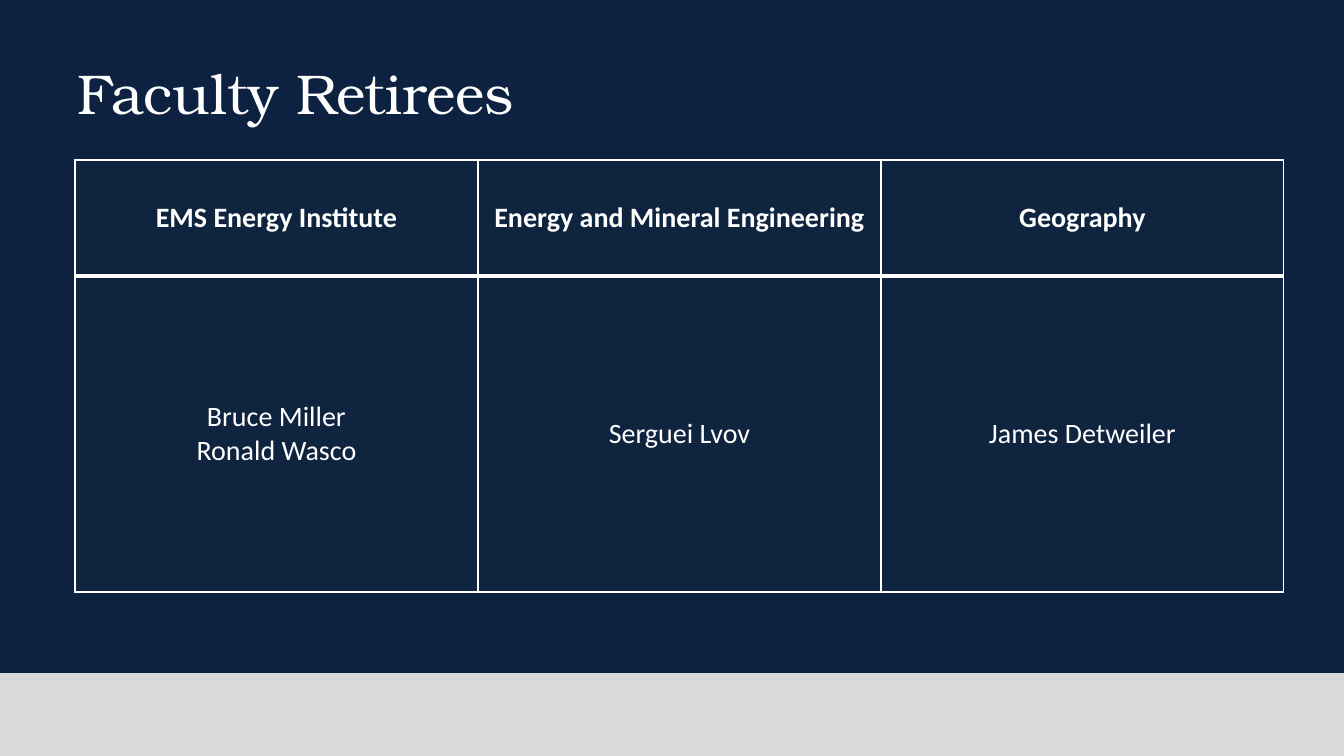
from lxml import etree
from pptx import Presentation
from pptx import util as u
from pptx.dml.color import RGBColor
from pptx.enum import shapes, text
from pptx.oxml.ns import qn

# Content
TITLE = "Faculty Retirees"
RETIREES = {
    "EMS Energy Institute": ["Bruce Miller", "Ronald Wasco"],
    "Energy and Mineral Engineering": ["Serguei Lvov"],
    "Geography": ["James Detweiler"],
}

# Style, with lengths in px
NAVY = RGBColor(0x0D, 0x22, 0x41)
CELL_NAVY = RGBColor(0x0F, 0x24, 0x3E)
GREY = RGBColor(0xD9, 0xD9, 0xD9)
WHITE = RGBColor(0xFF, 0xFF, 0xFF)
WIDTH, HEIGHT = 1344, 756
BANDS = [(0, 675, NAVY), (673, 83, GREY)]
TITLE_BOX = (67, 36, 1210, 112)
TABLE_LEFT, TABLE_TOP, COLUMN_WIDTH = 75, 160, 403
ROW_HEIGHTS = [116, 316]
THIN, THICK = 1, 3


def px(length):
    return u.Emu(round(length * 914400 / 100.8))


def add_span(para, words, font, size, bold=False):
    span = para.add_run()
    span.text = words
    span.font.name = font
    span.font.size = u.Pt(size)
    span.font.bold = bold
    span.font.color.rgb = WHITE


def set_borders(cell, widths):
    """Draw white borders; they must come before the cell's fill."""
    props = cell._tc.get_or_add_tcPr()
    for side, width in widths.items():
        line = etree.SubElement(props, qn(f"a:ln{side}"), w=str(u.Pt(width)))
        fill = etree.SubElement(line, qn("a:solidFill"))
        etree.SubElement(fill, qn("a:srgbClr"), val=str(WHITE))


def fill_cell(cell, lines, bold, borders):
    set_borders(cell, borders)
    cell.fill.solid()
    cell.fill.fore_color.rgb = CELL_NAVY
    cell.vertical_anchor = text.MSO_ANCHOR.MIDDLE
    cell.margin_left = cell.margin_right = px(11)
    cell.margin_top = cell.margin_bottom = px(6)
    frame = cell.text_frame
    for i, words in enumerate(lines):
        para = frame.add_paragraph() if i else frame.paragraphs[0]
        para.alignment = text.PP_ALIGN.CENTER
        add_span(para, words, "Calibri", 20, bold)


deck = Presentation()
deck.slide_width, deck.slide_height = px(WIDTH), px(HEIGHT)
page = deck.slides.add_slide(deck.slide_layouts[5])

# Background bands
for top, height, color in BANDS:
    band = page.shapes.add_shape(
        shapes.MSO_SHAPE.RECTANGLE, 0, px(top), px(WIDTH), px(height))
    band.shadow.inherit = False
    band.fill.solid()
    band.fill.fore_color.rgb = color
    band.line.fill.background()

# Title, brought in front of the bands
title = page.shapes.title
page.shapes._spTree.append(title._element)
title.left, title.top, title.width, title.height = map(px, TITLE_BOX)
title.text_frame.word_wrap = True
title.text_frame.vertical_anchor = text.MSO_ANCHOR.MIDDLE
title_para = title.text_frame.paragraphs[0]
title_para.alignment = text.PP_ALIGN.LEFT
add_span(title_para, TITLE, "TeX Gyre Bonum", 40)

# Retiree table
table = page.shapes.add_table(
    len(ROW_HEIGHTS), len(RETIREES), px(TABLE_LEFT), px(TABLE_TOP),
    px(COLUMN_WIDTH * len(RETIREES)), px(sum(ROW_HEIGHTS))).table
for row, height in zip(table.rows, ROW_HEIGHTS):
    row.height = px(height)
for c, (department, names) in enumerate(RETIREES.items()):
    table.columns[c].width = px(COLUMN_WIDTH)
    fill_cell(table.cell(0, c), [department], True,
              {"L": THIN, "R": THIN, "T": THIN, "B": THICK})
    fill_cell(table.cell(1, c), names, False,
              {"L": THIN, "R": THIN, "T": THICK, "B": THIN})

deck.save("out.pptx")
